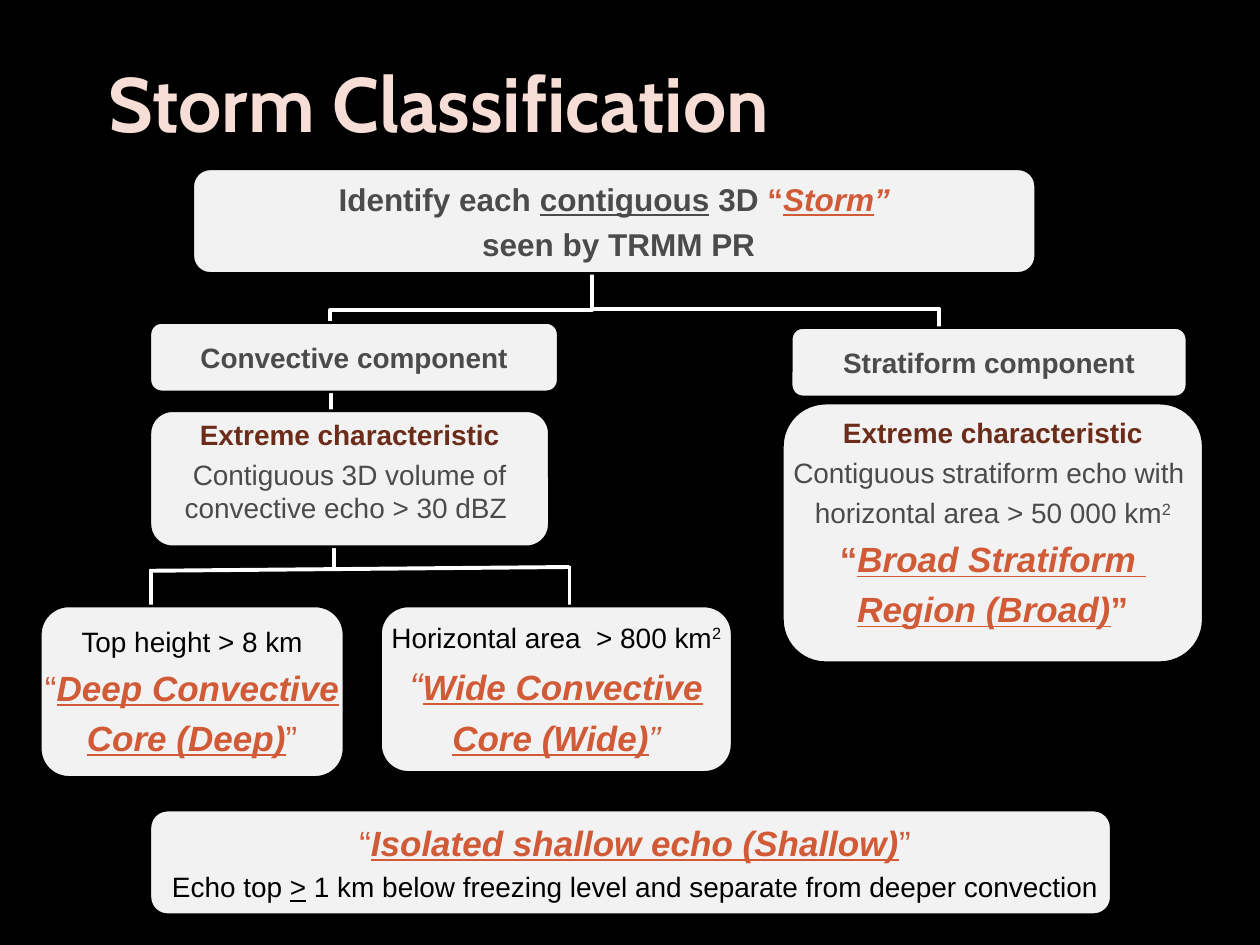
from pptx import Presentation, util as u
from pptx.dml.color import RGBColor
from pptx.enum import shapes, text
from pptx.oxml.ns import qn
from lxml import etree

BLACK = RGBColor(0x00, 0x00, 0x00)
WHITE = RGBColor(0xFF, 0xFF, 0xFF)
PANEL = RGBColor(0xF2, 0xF2, 0xF2)
GREY = RGBColor(0x4B, 0x4B, 0x4B)
BROWN = RGBColor(0x6B, 0x2C, 0x19)
RUST = RGBColor(0xD1, 0x5B, 0x37)
BLUSH = RGBColor(0xF6, 0xDE, 0xD7)

deck = Presentation()
deck.slide_width, deck.slide_height = u.Inches(10), u.Inches(7.5)
# Grid of 100 columns by 75 rows
COL = deck.slide_width / 100
ROW = deck.slide_height / 75
slide = deck.slides.add_slide(deck.slide_layouts[5])
slide.background.fill.solid()
slide.background.fill.fore_color.rgb = BLACK

# Title
title = slide.shapes.title
title.left, title.top = int(7.6 * COL), int(1.3 * ROW)
title.width, title.height = int(86.2 * COL), int(14.5 * ROW)
title.text_frame.text = "Storm Classification"
title.text_frame.vertical_anchor = text.MSO_ANCHOR.MIDDLE
head = title.text_frame.paragraphs[0]
head.alignment = text.PP_ALIGN.LEFT
head.line_spacing = 0.9
head.font.name, head.font.size, head.font.bold = "Cabin", u.Pt(44), True
head.font.color.rgb = BLUSH


def link(kind, x1, y1, x2, y2):
    wire = slide.shapes.add_connector(
        kind, int(x1 * COL), int(y1 * ROW), int(x2 * COL), int(y2 * ROW))
    wire.line.color.rgb = WHITE
    wire.line.width = u.Pt(2.25)
    etree.SubElement(wire._element.spPr, qn("a:effectLst"))
    return wire


# Straight links
STRAIGHT = shapes.MSO_CONNECTOR.STRAIGHT
for ends in [(45.2, 44.9, 45.2, 49.9), (12, 45.2, 12, 49.6),
             (26.5, 39.4, 26.5, 45.2), (26.3, 34.7, 26.3, 29.4)]:
    link(STRAIGHT, *ends)

# Elbows from each component up to the storm box, turned to leave vertically
for x, low, top in [(74.5, 30.9, 18.1), (26.2, 31, 18.2)]:
    side = 1 if x > 47 else -1
    midx, midy = (x + 47) / 2, (low + top) / 2
    rise, run = side * (low - top) / 2, abs(x - 47) / 2
    elbow = link(shapes.MSO_CONNECTOR.ELBOW,
                 midx + rise, midy - run, midx - rise, midy + run)
    turn = 90 if side > 0 else 270
    elbow._element.spPr.find(qn("a:xfrm")).set("rot", str(turn * 60000))

# Boxes: place, anchor, wrap, paragraphs
# Paragraph: size, colour, flags, indented, runs
# Run: text, flags (b bold, i italic, u underline, ^ raised), colour, size
MID, TOP = text.MSO_ANCHOR.MIDDLE, text.MSO_ANCHOR.TOP
EXTREME = (16, BROWN, "b", False, [("Extreme characteristic", "")])
boxes = [
    ((15.3, 13.4, 66.9, 8.3), MID, False, [
        (18, GREY, "b", False, [
            ("Identify each ", ""), ("contiguous", "u"), (" 3D ", ""),
            ("“", "", RUST), ("Storm", "iu", RUST), ("”", "i", RUST)]),
        (18, GREY, "b", True, [("seen by TRMM PR", "")])]),
    ((11.9, 25.6, 32.4, 5.5), MID, False, [
        (16, GREY, "b", False, [("Convective component", "")])]),
    ((62.8, 26, 31.4, 5.5), MID, False, [
        (16, GREY, "b", False, [("Stratiform component", "")])]),
    ((11.9, 32.6, 31.7, 10.8), TOP, False, [
        EXTREME,
        (16, GREY, "", False, [
            ("Contiguous 3D volume of\nconvective echo > 30 dBZ ", "")])]),
    ((3.2, 48.1, 24.1, 13.6), MID, False, [
        (16, BLACK, "", False, [("Top height > 8 km", "")]),
        (20, RUST, "", False, [("“", ""), ("Deep Convective", "biu")]),
        (20, RUST, "", False, [("Core (Deep)", "biu"), ("”", "")])]),
    ((30.2, 48.1, 27.9, 13.2), MID, False, [
        (16, BLACK, "", False, [("Horizontal area  > 800 km", ""), ("2", "^")]),
        (20, RUST, "i", False, [("“", "", RUST, 22), ("Wide Convective", "bu")]),
        (20, RUST, "i", False, [("Core (Wide)", "bu"), ("”", "")])]),
    ((62.1, 32, 33.4, 20.6), TOP, False, [
        EXTREME,
        (16, GREY, "", False, [("Contiguous stratiform echo with ", "")]),
        (16, GREY, "", False, [("horizontal area > 50 000 km", ""), ("2", "^")]),
        (20, RUST, "b", False, [("“", ""), ("Broad Stratiform ", "iu")]),
        (20, RUST, "b", False, [("Region (Broad)", "iu"), ("”", "")])]),
    ((11.9, 64.3, 76.3, 8.3), MID, True, [
        (20, RUST, "", True, [
            ("“", ""), ("Isolated shallow echo (Shallow)", "biu"), ("”", "")]),
        (16, BLACK, "", True, [
            ("Echo top ", ""), (">", "u"),
            (" 1 km below freezing level and separate from deeper convection",
             "")])]),
]

for (x, y, w, h), anchor, wrap, paras in boxes:
    box = slide.shapes.add_shape(
        shapes.MSO_SHAPE.ROUNDED_RECTANGLE,
        int(x * COL), int(y * ROW), int(w * COL), int(h * ROW))
    box.shadow.inherit = False
    box.fill.solid()
    box.fill.fore_color.rgb = PANEL
    box.line.color.rgb = BLACK
    box.line.width = u.Pt(1.5)
    frame = box.text_frame
    frame.margin_left = frame.margin_right = 0
    frame.margin_top = frame.margin_bottom = 0
    frame.word_wrap = wrap
    frame.vertical_anchor = anchor
    for n, (size, colour, base, inset, runs) in enumerate(paras):
        para = frame.add_paragraph() if n else frame.paragraphs[0]
        para.alignment = text.PP_ALIGN.CENTER
        if n:
            para.space_before = u.Pt(round(0.23 * size, 1))
        if inset:
            para._p.get_or_add_pPr().set("marL", str(u.Inches(0.07)))
        para.font.name, para.font.size = "Arial", u.Pt(size)
        para.font.color.rgb = colour
        para.font.bold, para.font.italic = "b" in base, "i" in base
        for words, flags, *extra in runs:
            for k, line in enumerate(words.split("\n")):
                if k:
                    para.add_line_break()
                part = para.add_run()
                part.text = line
                # Only what differs from the paragraph
                if "b" in flags:
                    part.font.bold = True
                if "i" in flags:
                    part.font.italic = True
                if "u" in flags:
                    part.font.underline = True
                if "^" in flags:
                    part.font._element.set("baseline", "30000")
                if extra:
                    part.font.color.rgb = extra[0]
                if len(extra) > 1:
                    part.font.size = u.Pt(extra[1])

# Slightly tilted bar above the two convective cores
link(STRAIGHT, 11.9, 45.3, 45.2, 45)

deck.save("out.pptx")
